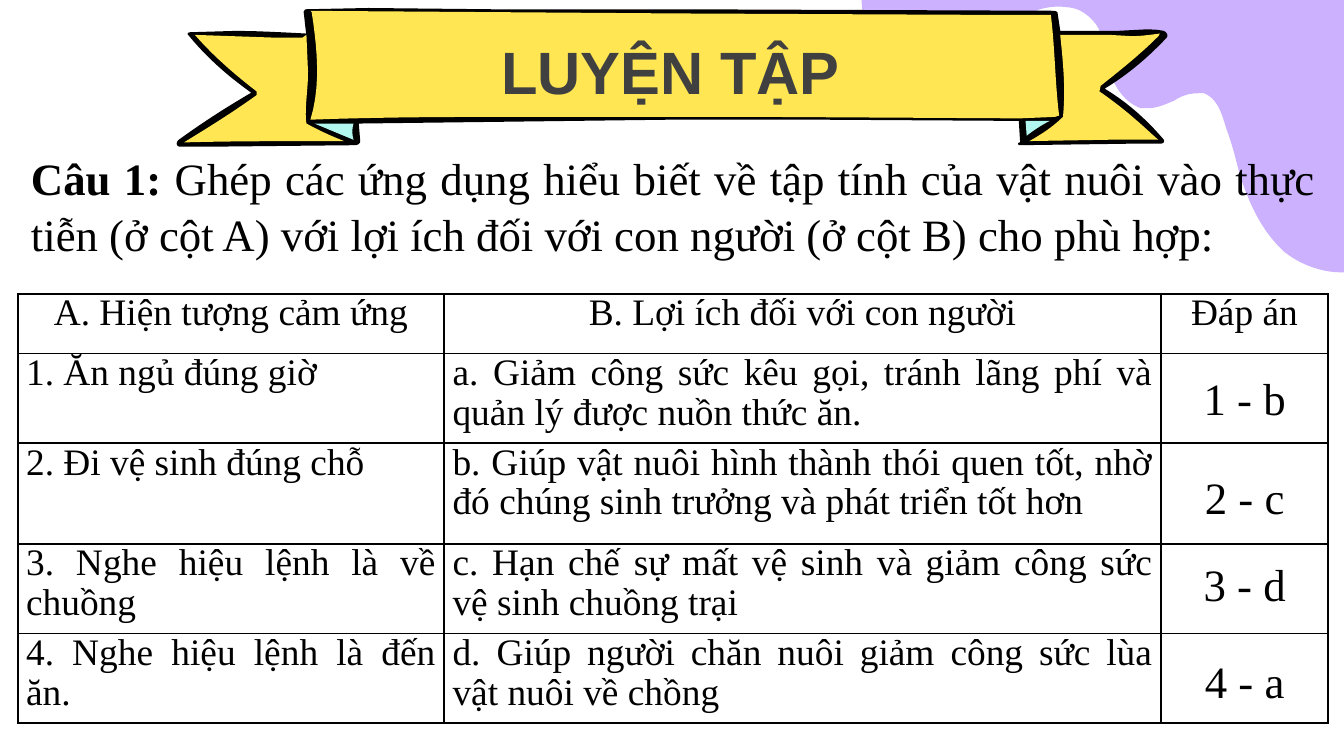
from lxml import etree
from pptx import Presentation
from pptx.dml.color import RGBColor
from pptx.enum.text import MSO_ANCHOR, MSO_AUTO_SIZE, PP_ALIGN
from pptx.oxml.ns import qn
from pptx.util import Pt

MID, LEFT, JUST = PP_ALIGN.CENTER, PP_ALIGN.LEFT, PP_ALIGN.JUSTIFY
TOP, HALF = MSO_ANCHOR.TOP, MSO_ANCHOR.MIDDLE
FIXED = MSO_AUTO_SIZE.NONE

THEME = {
    "ink": "000000", "gray": "404040", "gold": "FFE652",
    "teal": "B2F7EF", "lilac": "CCB1FE",
    "head": "Arial", "body": "Times New Roman",
    "title": 32, "ask": 24, "cell": 20,
}

TITLE = "LUYỆN TẬP"
ASK = [
    ("Câu 1: ", True),
    ("Ghép các ứng dụng hiểu biết về tập tính của vật nuôi vào thực tiễn "
     "(ở cột A) với lợi ích đối với con người (ở cột B) cho phù hợp:", False),
]
HEADS = ["A. Hiện tượng cảm ứng", "B. Lợi ích đối với con người", "Đáp án"]
PAIRS = [
    ("1. Ăn ngủ đúng giờ",
     "a. Giảm công sức kêu gọi, tránh lãng phí và quản lý được nuồn thức ăn."),
    ("2. Đi vệ sinh đúng chỗ",
     "b. Giúp vật nuôi hình thành thói quen tốt, nhờ đó chúng sinh trưởng "
     "và phát triển tốt hơn"),
    ("3. Nghe hiệu lệnh là về chuồng",
     "c. Hạn chế sự mất vệ sinh và giảm công sức vệ sinh chuồng trại"),
    ("4. Nghe hiệu lệnh là đến ăn.",
     "d. Giúp người chăn nuôi giảm công sức lùa vật nuôi về chồng"),
]
KEYS = [("1 - b", 195), ("2 - c", 248), ("3 - d", 294.5), ("4 - a", 346.5)]
COLS = [228.5, 384, 89.5]
ROWS = [32, 48, 54, 48, 48]

# Two numbers make a line, six make a cubic curve.
BLOB = [
    (528, -75), (526, -75, 524, -74, 521, -72), (501, -55, 472, -47, 464, -20),
    (455, 6, 469, 38, 496, 48), (500, 50, 504, 51, 508, 51),
    (511, 51, 514, 50, 518, 49), (523, 45, 528, 40, 531, 34),
    (535, 28, 538, 22, 542, 16), (546, 11, 552, 7, 557, 5),
    (561, 4, 564, 3.6, 567, 3.6), (570, 3.6, 574, 4, 577, 5),
    (582, 7, 588, 12, 590, 19), (593, 26, 593, 33, 595, 40),
    (598, 48, 603, 55, 611, 58), (612, 58, 613, 58, 615, 58),
    (620, 58, 624, 56, 629, 54), (632, 52, 636, 50, 642, 50),
    (643, 50, 644, 50, 645, 50), (653, 53, 655, 63, 657, 69),
    (660, 77, 662, 85, 664, 93), (669, 109, 676, 124, 688, 135),
    (697, 142, 708, 146, 719, 146), (722, 146, 726, 146, 730, 145),
    (742, 140, 752, 130, 758, 120), (765, 107, 770, 94, 773, 81),
    (777, 67, 779, 53, 777, 38), (774, 24, 767, 11, 755, 1),
    (741, -9, 723, -14, 707, -19), (688, -24, 670, -29, 652, -34),
    (615, -42, 578, -52, 544, -68), (540, -70, 537, -73, 528, -75),
]
EDGE = [
    (197.3, 4.3), (164, 5), (163.5, 5, 163, 5.5, 162.7, 6.5), (164, 18),
    (150.5, 17.3, 138, 16.6, 126, 16.6), (102, 17.3),
    (101, 17.3, 100, 18, 100.8, 18.7), (110, 30, 121, 40, 134.6, 49.7),
    (121, 57.6, 108, 66, 95.8, 74.9), (94.3, 76, 94.3, 78, 95.8, 78.5),
    (121.7, 78.5), (190, 77.8), (191.5, 77.8, 193, 77, 193, 75.6),
    (192.2, 66.2), (363.6, 64.1), (429.8, 64.1), (545.8, 64.8),
    (546.5, 76.3), (545, 76.3, 545, 77.8, 546.5, 77.8), (604.8, 77),
    (621.4, 77), (623, 77, 624, 76.3, 623.5, 74.9),
    (614.9, 64.8, 604.8, 55.4, 591.8, 47.5), (605, 39.6, 616.3, 29.5, 625, 20.2),
    (626, 19, 625, 17.3, 623.5, 16.6), (620, 15.8, 617, 15.8, 613.4, 15.8),
    (598.3, 16.6), (568, 16.6), (566.6, 7.2), (566.6, 6, 565, 5.8, 563, 5.8),
    (362.9, 5), (263.5, 5),
]
TAIL_L = [
    (164.2, 18.7), (162, 20.2), (147, 20.2), (104.4, 18.7),
    (113.8, 29.5, 125.3, 39.6, 137.5, 49), (137.5, 51),
    (125.3, 59.8, 111.6, 68.4, 98.6, 76.3), (126.7, 75.6, 155.5, 75.6, 184.3, 75.6),
    (177, 72.7, 170.6, 69.8, 164.2, 66.2), (163.9, 64),
    (163.4, 54.7, 165.6, 44.6, 164.9, 35.3),
]
TAIL_R = [
    (621.4, 18), (616.3, 18.7, 611.3, 19.4, 606.2, 19.4), (594, 18.7),
    (568, 18.7), (569.5, 33, 571, 47.5, 569.5, 62.6),
    (564.5, 67.7, 558, 72, 551.5, 75.6), (594, 74.9), (620.6, 74.9),
    (616.3, 71.3, 612.7, 67.7, 608.4, 64.1), (602.6, 59, 596.2, 54, 589, 49),
    (589.7, 46), (600.5, 37.4, 611.3, 28.8, 620.6, 19.4),
]
BAND = [
    (166.3, 5.8), (167, 6.5), (169.9, 25.2, 172, 46, 166.3, 64.1),
    (206.6, 62.6, 247, 62.6, 287, 62.6), (408, 62.6), (546.5, 63.4),
    (565.2, 62.6), (567.4, 61.9), (565.2, 43.9, 565.2, 25.9, 563, 7.9),
    (516, 7.9), (363, 7.2), (263.5, 6.5),
]
FOLD_R = [(562.3, 64.8), (549.4, 64.8), (550, 72.7),
          (553.7, 69.8, 558, 67, 562.3, 64.8)]
FOLD_L = [(168.5, 66.2), (189.4, 74.9), (188.6, 72, 188.6, 69, 189.4, 66.2)]
RIBBON = [(EDGE, "ink"), (TAIL_L, "gold"), (TAIL_R, "gold"), (BAND, "gold"),
          (FOLD_R, "teal"), (FOLD_L, "teal")]


def trace(steps, parts=10):
    dots = [steps[0]]
    for step in steps[1:]:
        if len(step) == 2:
            dots.append(step)
            continue
        ends = [dots[-1], step[:2], step[2:4], step[4:]]
        for i in range(1, parts + 1):
            t = i / parts
            u = 1 - t
            mix = (u**3, 3 * u * u * t, 3 * u * t * t, t**3)
            dots.append(tuple(sum(m * e[k] for m, e in zip(mix, ends)) for k in (0, 1)))
    return [(Pt(x), Pt(y)) for x, y in dots]


def draw(shapes, steps, tint):
    dots = trace(steps)
    pen = shapes.build_freeform(*dots[0])
    pen.add_line_segments(dots[1:], close=True)
    shape = pen.convert_to_shape()
    shape.shadow.inherit = False
    shape.fill.solid()
    shape.fill.fore_color.rgb = RGBColor.from_string(THEME[tint])
    shape.line.fill.background()


def write(frame, runs, size="ask", font="body", tint="ink", align=MID, gap=1):
    para = frame.paragraphs[0]
    para.alignment = align
    para.line_spacing = gap
    for words, bold in runs:
        run = para.add_run()
        run.text = words
        run.font.size = Pt(THEME[size])
        run.font.name = THEME[font]
        run.font.bold = bold
        run.font.color.rgb = RGBColor.from_string(THEME[tint])


def place(shape, x, y, w, h):
    shape.left, shape.top, shape.width, shape.height = map(Pt, (x, y, w, h))


def add_box(shapes, x, y, w, h, runs, anchor=TOP, **form):
    frame = shapes.add_textbox(*map(Pt, (x, y, w, h))).text_frame
    frame.word_wrap = True
    frame.vertical_anchor = anchor
    write(frame, runs, **form)


def rule(cell):
    props = cell._tc.get_or_add_tcPr()
    for i, side in enumerate(("lnL", "lnR", "lnT", "lnB")):
        line = etree.Element(qn("a:" + side), w=str(Pt(1)))
        fill = etree.SubElement(line, qn("a:solidFill"))
        etree.SubElement(fill, qn("a:srgbClr"), val=THEME["ink"])
        props.insert(i, line)


def add_grid(shapes):
    rows = [HEADS] + [[*pair, ""] for pair in PAIRS]
    spot = map(Pt, (9.5, 157.5, sum(COLS), sum(ROWS)))
    grid = shapes.add_table(len(ROWS), len(COLS), *spot).table
    grid.first_row = grid.horz_banding = False
    for col, w in zip(grid.columns, COLS):
        col.width = Pt(w)
    for r, (row, h) in enumerate(zip(rows, ROWS)):
        grid.rows[r].height = Pt(h)
        for c, words in enumerate(row):
            cell = grid.cell(r, c)
            cell.fill.background()
            cell.margin_left = cell.margin_right = Pt(4.5)
            cell.margin_top = cell.margin_bottom = 0
            rule(cell)
            if words:
                write(cell.text_frame, [(words, False)], size="cell",
                      align=JUST if r else MID, gap=0.96)


def main():
    deck = Presentation()
    deck.slide_width, deck.slide_height = Pt(720), Pt(405)
    slide = deck.slides.add_slide(deck.slide_layouts[5])
    shapes = slide.shapes
    draw(shapes, BLOB, "lilac")
    ribbon = shapes.add_group_shape()
    for steps, tint in RIBBON:
        draw(ribbon.shapes, steps, tint)

    title = shapes.title
    shapes.element.append(title.element)
    place(title, 163.5, 11.5, 391.5, 45.5)
    frame = title.text_frame
    frame.auto_size = FIXED
    frame.vertical_anchor = TOP
    frame.margin_left = frame.margin_right = Pt(7.2)
    frame.margin_top = frame.margin_bottom = Pt(7.2)
    write(frame, [(TITLE, True)], size="title", font="head", tint="gray")

    add_grid(shapes)
    add_box(shapes, 9.5, 76.5, 702, 65.5, ASK, anchor=HALF, align=JUST, gap=1.05)
    for words, y in KEYS:
        add_box(shapes, 633, y, 67.5, 36, [(words, False)])
    deck.save("out.pptx")


if __name__ == "__main__":
    main()
